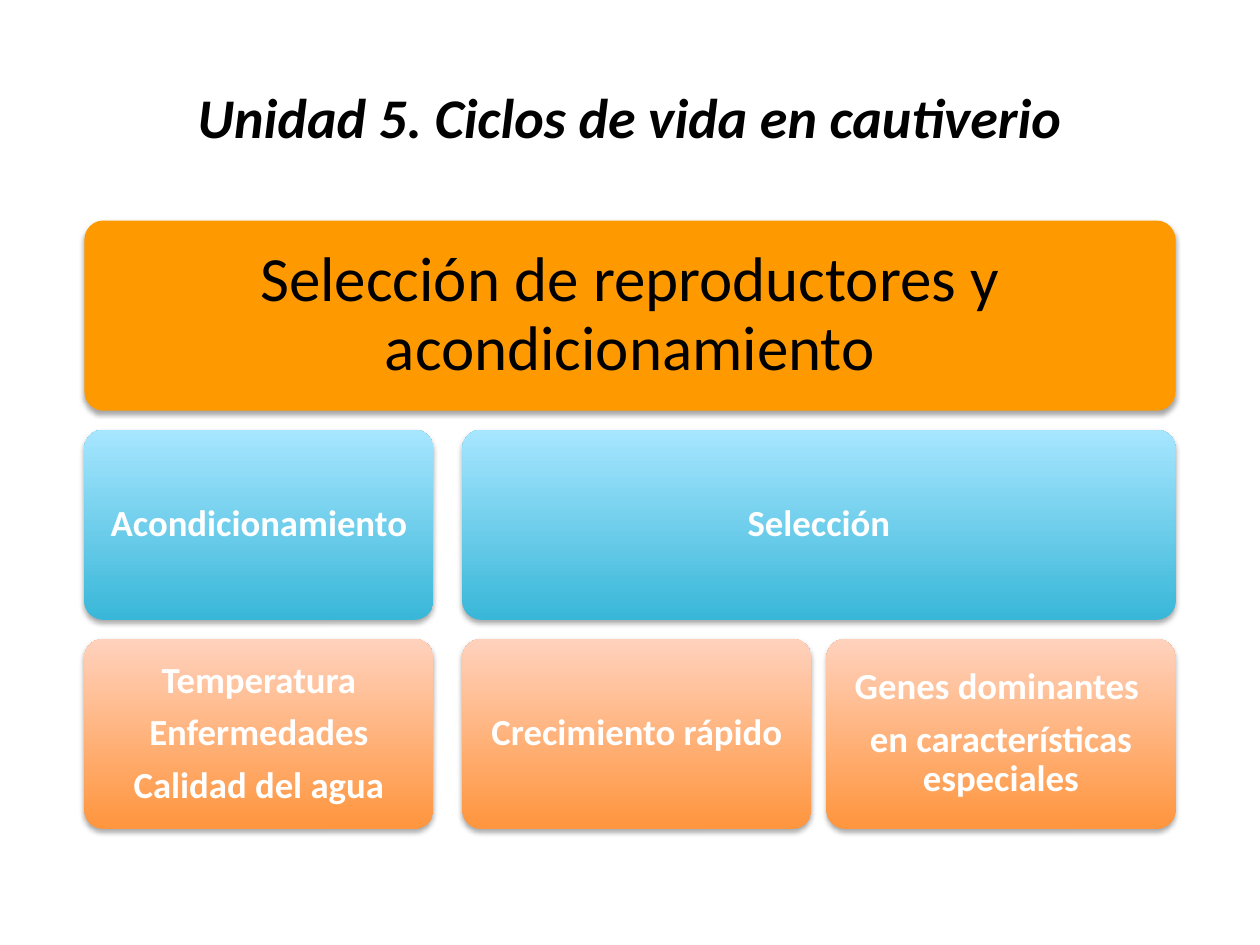
from lxml import etree
from pptx import Presentation
from pptx.dml.color import RGBColor
from pptx.enum.shapes import MSO_SHAPE
from pptx.enum.text import MSO_ANCHOR, PP_ALIGN
from pptx.oxml.ns import qn
from pptx.util import Inches, Pt

ROUNDED = MSO_SHAPE.ROUNDED_RECTANGLE
MIDDLE = MSO_ANCHOR.MIDDLE
CENTER = PP_ALIGN.CENTER

TITLE = "Unidad 5. Ciclos de vida en cautiverio"
# row, first column, last column, style, paragraphs
BOXES = [
    (0, 0, 2, "topic", ["Selección de reproductores y acondicionamiento"]),
    (1, 1, 2, "branch", ["Selección"]),
    (2, 2, 2, "detail", ["Genes dominantes ", "en características especiales"]),
    (2, 1, 1, "detail", ["Crecimiento rápido"]),
    (1, 0, 0, "branch", ["Acondicionamiento"]),
    (2, 0, 0, "detail", ["Temperatura", "Enfermedades", "Calidad del agua"]),
]

THEME = {
    "font": "Calibri",
    "title": {"size": 32, "color": "000000", "bold": True, "italic": True},
    "topic": {"size": 36, "color": "000000", "bold": False,
              "fill": ["FF9900"], "inset": 0.19},
    "branch": {"size": 21, "color": "FFFFFF", "bold": True,
               "fill": ["39B7D8", "A7E6FF"], "inset": 0.13},
    "detail": {"size": 21, "color": "FFFFFF", "bold": True,
               "fill": ["FF953E", "FFD2BD"], "inset": 0.13},
    "shadow": {"color": "000000", "alpha": 35, "blur": 3.1, "distance": 1.8},
}

COLUMN_LEFTS = (0.67, 3.67, 6.56)
COLUMN_WIDTH = 2.77
TOP, ROW_PITCH, ROW_HEIGHT = 1.75, 1.66, 1.51


def add_run(paragraph, text, style):
    paragraph.alignment = CENTER
    run = paragraph.add_run()
    run.text = text
    run.font.name = THEME["font"]
    run.font.size = Pt(style["size"])
    run.font.bold = style["bold"]
    run.font.italic = style.get("italic", False)
    run.font.color.rgb = RGBColor.from_string(style["color"])


def paint(shape, colors):
    if len(colors) == 1:
        shape.fill.solid()
        shape.fill.fore_color.rgb = RGBColor.from_string(colors[0])
    else:
        shape.fill.gradient()
        shape.fill.gradient_angle = 90
        for stop, color in zip(shape.fill.gradient_stops, colors):
            stop.color.rgb = RGBColor.from_string(color)
    shape.line.fill.background()


def add_shadow(shape):
    shadow = THEME["shadow"]
    shape.shadow.inherit = False
    effects = shape.element.spPr.find(qn("a:effectLst"))
    outer = etree.SubElement(
        effects, qn("a:outerShdw"), blurRad=str(Pt(shadow["blur"])),
        dist=str(Pt(shadow["distance"])), dir="5400000", rotWithShape="0")
    color = etree.SubElement(outer, qn("a:srgbClr"), val=shadow["color"])
    etree.SubElement(color, qn("a:alpha"), val=str(shadow["alpha"] * 1000))


def add_box(slide, row, first, last, style, lines):
    left = COLUMN_LEFTS[first]
    width = COLUMN_LEFTS[last] + COLUMN_WIDTH - left
    shape = slide.shapes.add_shape(
        ROUNDED, Inches(left), Inches(TOP + row * ROW_PITCH),
        Inches(width), Inches(ROW_HEIGHT))
    shape.adjustments[0] = 0.1
    paint(shape, style["fill"])
    add_shadow(shape)

    frame = shape.text_frame
    frame.word_wrap = True
    frame.vertical_anchor = MIDDLE
    frame.margin_left = frame.margin_right = Inches(style["inset"])
    frame.margin_top = frame.margin_bottom = Inches(style["inset"])
    for index, line in enumerate(lines):
        paragraph = frame.add_paragraph() if index else frame.paragraphs[0]
        paragraph.line_spacing = 0.9
        paragraph.space_after = Pt(style["size"] * 0.35)
        add_run(paragraph, line, style)


def main():
    presentation = Presentation()
    presentation.slide_width = Inches(10)
    presentation.slide_height = Inches(7.5)
    slide = presentation.slides.add_slide(presentation.slide_layouts[5])

    title = slide.shapes.title
    title.left, title.top = Inches(0.5), Inches(0.3)
    title.width, title.height = Inches(9), Inches(1.25)
    title.text_frame.vertical_anchor = MIDDLE
    add_run(title.text_frame.paragraphs[0], TITLE, THEME["title"])

    for row, first, last, style, lines in BOXES:
        add_box(slide, row, first, last, THEME[style], lines)
    presentation.save("out.pptx")


if __name__ == "__main__":
    main()
